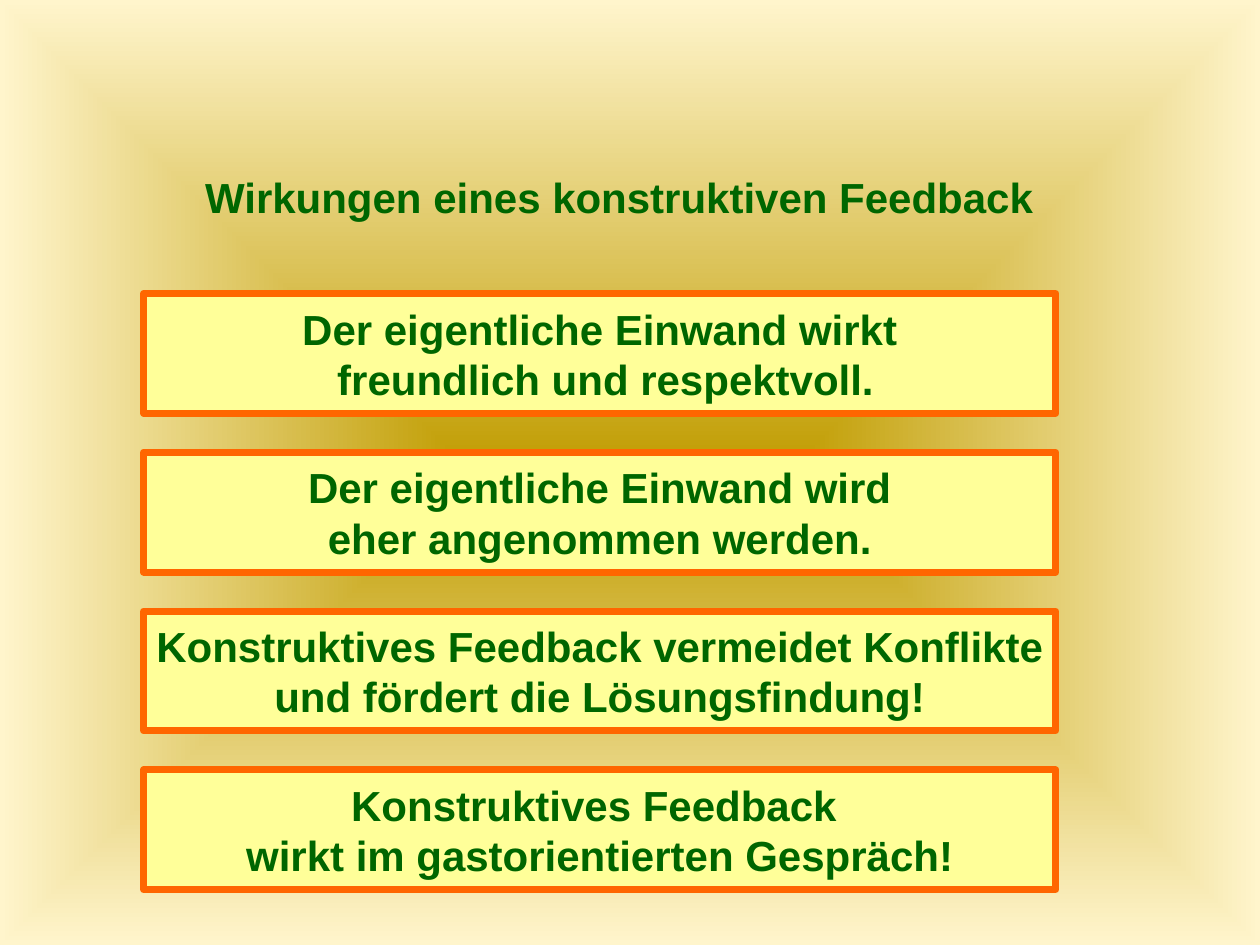
from lxml import etree
from pptx import Presentation
from pptx.dml.color import RGBColor
from pptx.enum.shapes import MSO_SHAPE
from pptx.enum.text import MSO_ANCHOR, PP_ALIGN
from pptx.oxml.ns import qn
from pptx.util import Inches, Pt

RECT = MSO_SHAPE.RECTANGLE
MIDDLE = MSO_ANCHOR.MIDDLE
LEFT, CENTER = PP_ALIGN.LEFT, PP_ALIGN.CENTER

GREEN = RGBColor(0x00, 0x66, 0x00)
YELLOW = RGBColor(0xFF, 0xFF, 0x99)
ORANGE = RGBColor(0xFF, 0x66, 0x00)
GOLD = RGBColor(0xC0, 0x9C, 0x00)
CREAM = RGBColor(0xFF, 0xF5, 0xCC)

# Column of boxes: first top, distance between tops
BOX_LEFT, BOX_TOP, BOX_W, BOX_H = 1.14, 2.33, 7.24, 0.95
ROW_STEP = 1.26


def write(shape, lines, align=LEFT, size=24, color=GREEN, bold=True, font="Arial"):
    tf = shape.text_frame
    tf.word_wrap = True
    tf.vertical_anchor = MIDDLE
    for i, line in enumerate(lines):
        p = tf.paragraphs[0] if i == 0 else tf.add_paragraph()
        p.alignment = align
        r = p.add_run()
        r.text = line
        r.font.name, r.font.size, r.font.bold = font, Pt(size), bold
        r.font.color.rgb = color


prs = Presentation()
prs.slide_width, prs.slide_height = Inches(10), Inches(7.5)
s = prs.slides.add_slide(prs.slide_layouts[6])

# Background: gold centre fading to cream edges
fill = s.background.fill
fill.gradient()
for stop, color in zip(fill.gradient_stops, (GOLD, CREAM)):
    stop.color.rgb = color
grad = s.element.find(".//" + qn("a:gradFill"))
grad.remove(grad.find(qn("a:lin")))
shade = etree.Element(qn("a:path"), {"path": "shape"})
etree.SubElement(shade, qn("a:fillToRect"), {side: "50000" for side in "ltrb"})
grad.find(qn("a:gsLst")).addnext(shade)

# Title
title = s.shapes.add_textbox(Inches(1.53), Inches(1.31), Inches(7.17), Inches(0.5))
write(title, ["Wirkungen eines konstruktiven Feedback"])

# Effects, one box per row
effects = [
    ["Der eigentliche Einwand wirkt", " freundlich und respektvoll."],
    ["Der eigentliche Einwand wird", "eher angenommen werden."],
    ["Konstruktives Feedback vermeidet Konflikte und fördert die Lösungsfindung!"],
    ["Konstruktives Feedback ", "wirkt im gastorientierten Gespräch!"],
]
for row, lines in enumerate(effects):
    sp = s.shapes.add_shape(RECT, Inches(BOX_LEFT), Inches(BOX_TOP + row * ROW_STEP),
                            Inches(BOX_W), Inches(BOX_H))
    sp.shadow.inherit = False
    sp.fill.solid()
    sp.fill.fore_color.rgb = YELLOW
    sp.line.color.rgb = ORANGE
    sp.line.width = Pt(4)
    write(sp, lines, align=CENTER)

prs.save("out.pptx")
